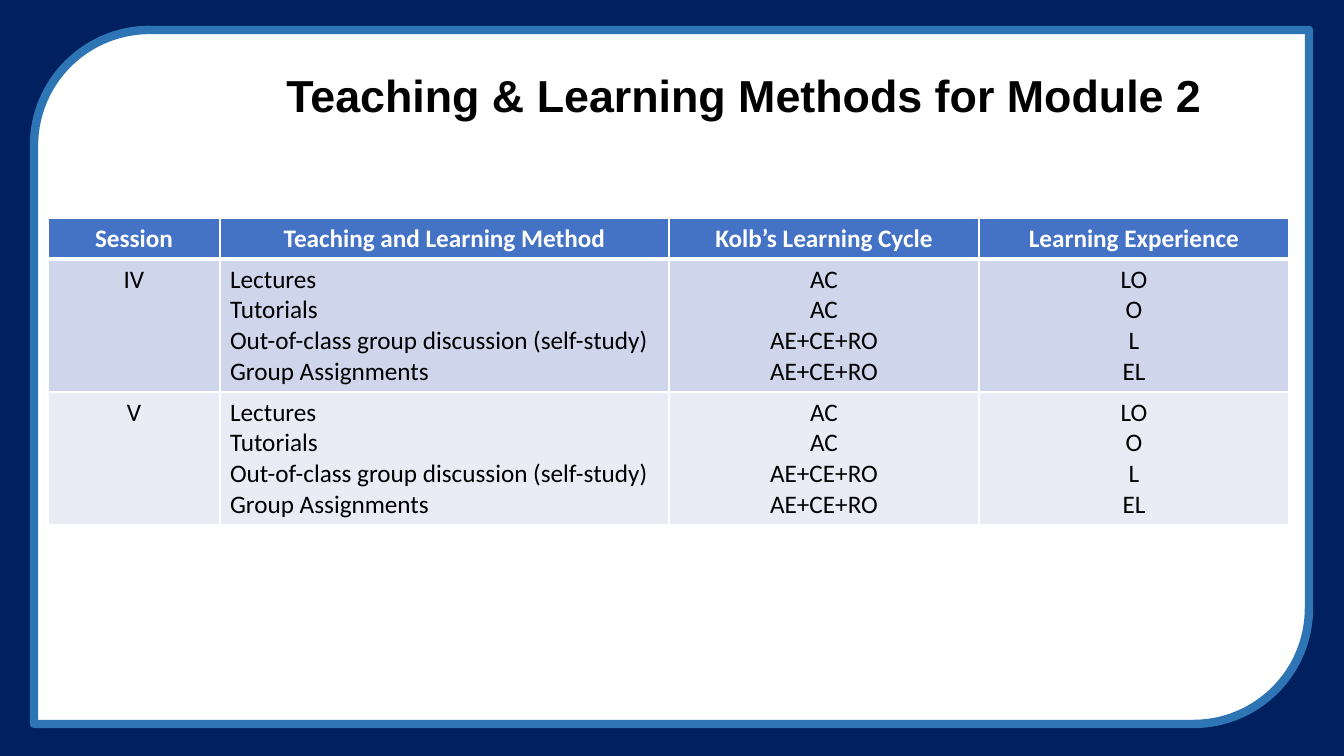
import pptx
import pptx.dml.color
import pptx.enum.shapes
import pptx.enum.text
import pptx.oxml.ns
import pptx.util
from lxml import etree

COLORS = {
    "navy": "002060", "frame": "2E75B6", "white": "FFFFFF", "black": "000000",
    "header": "4472C4", "band_dark": "CFD5EA", "band_light": "E9EBF5",
}
EMU_PER_PX = 914400 / 100.8
SHAPES = pptx.enum.shapes.MSO_SHAPE
ALIGN = pptx.enum.text.PP_ALIGN
ANCHOR = pptx.enum.text.MSO_ANCHOR


def px(length):
    return pptx.util.Emu(round(length * EMU_PER_PX))


def rgb(color):
    return pptx.dml.color.RGBColor.from_string(COLORS[color])


class SlideBuilder:
    title_font, body_font = "Arial", "Calibri"

    def __init__(self, slide):
        self.slide = slide

    def panel(self, preset, box, fill, line=None, line_pt=0):
        panel = self.slide.shapes.add_shape(preset, *map(px, box))
        panel.shadow.inherit = False
        panel.fill.solid()
        panel.fill.fore_color.rgb = rgb(fill)
        if line:
            panel.line.color.rgb = rgb(line)
            panel.line.width = pptx.util.Pt(line_pt)
        else:
            panel.line.fill.background()

    def add_lines(self, frame, lines, font, size, color, bold, align):
        for index, line in enumerate(lines):
            paragraph = frame.add_paragraph() if index else frame.paragraphs[0]
            paragraph.alignment = align
            run = paragraph.add_run()
            run.text = line
            run.font.name = font
            run.font.size = pptx.util.Pt(size)
            run.font.bold = bold
            run.font.color.rgb = rgb(color)

    def title(self, box, text):
        frame = self.slide.shapes.add_textbox(*map(px, box)).text_frame
        frame.word_wrap = True
        frame.vertical_anchor = ANCHOR.MIDDLE
        self.add_lines(frame, [text], self.title_font, 32, "black", True,
                       ALIGN.CENTER)
        frame.paragraphs[0].line_spacing = 0.9

    def border(self, cell, side, width_pt):
        line = etree.SubElement(cell._tc.get_or_add_tcPr(),
                                pptx.oxml.ns.qn(f"a:ln{side}"),
                                w=str(pptx.util.Pt(width_pt)))
        fill = etree.SubElement(line, pptx.oxml.ns.qn("a:solidFill"))
        etree.SubElement(fill, pptx.oxml.ns.qn("a:srgbClr"), val=COLORS["white"])

    def table(self, left, top, widths, heights, rows, fills):
        table = self.slide.shapes.add_table(
            len(rows), len(widths), px(left), px(top),
            px(sum(widths)), px(sum(heights))).table
        for column, width in zip(table.columns, widths):
            column.width = px(width)
        for row, height in zip(table.rows, heights):
            row.height = px(height)
        for r, row in enumerate(rows):
            is_header = r == 0
            for c, lines in enumerate(row):
                cell = table.cell(r, c)
                # A thicker rule separates the header from the sessions
                for side in "LRTB":
                    under_header = (r, side) in ((0, "B"), (1, "T"))
                    self.border(cell, side, 3 if under_header else 1)
                cell.fill.solid()
                cell.fill.fore_color.rgb = rgb(fills[r])
                align = ALIGN.LEFT if c == 1 and not is_header else ALIGN.CENTER
                self.add_lines(cell.text_frame, lines, self.body_font, 18,
                               "white" if is_header else "black", is_header, align)


def main():
    deck = pptx.Presentation()
    deck.slide_width, deck.slide_height = px(1344), px(756)
    builder = SlideBuilder(deck.slides.add_slide(deck.slide_layouts[6]))

    # Background and frame
    builder.panel(SHAPES.RECTANGLE, (0, 0, 1344, 756), "navy")
    builder.panel(SHAPES.ROUND_2_DIAG_RECTANGLE, (34, 30, 1275, 694),
                  "white", "frame", 6)

    # Title
    builder.title((198, 49, 1093, 98), "Teaching & Learning Methods for Module 2")

    # Both sessions use the same methods
    header = [["Session"], ["Teaching and Learning Method"],
              ["Kolb’s Learning Cycle"], ["Learning Experience"]]
    methods = [
        ["Lectures", "Tutorials", "Out-of-class group discussion (self-study)",
         "Group Assignments"],
        ["AC", "AC", "AE+CE+RO", "AE+CE+RO"],
        ["LO", "O", "L", "EL"],
    ]
    sessions = [[[session]] + methods for session in ("IV", "V")]
    builder.table(48, 218, (172, 449, 310, 310), (41, 133, 133),
                  [header] + sessions, ("header", "band_dark", "band_light"))

    deck.save("out.pptx")


if __name__ == "__main__":
    main()
